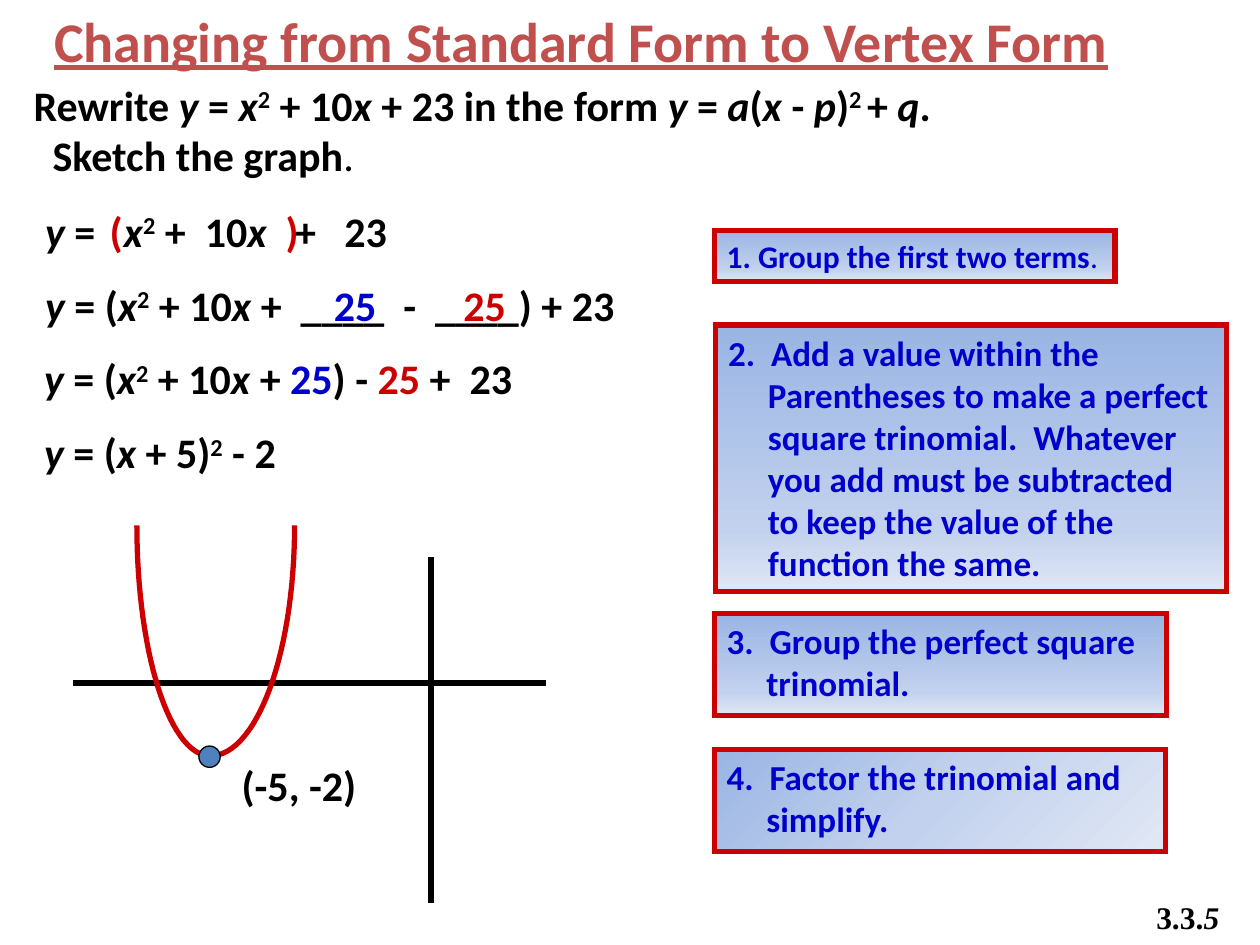
"""Build a slide on changing a quadratic from standard form to vertex form."""
from copy import deepcopy
from math import cos, pi, sin

from lxml.etree import SubElement
from pptx import Presentation
from pptx.dml.color import RGBColor
from pptx.enum.shapes import MSO_CONNECTOR, MSO_SHAPE
from pptx.enum.text import MSO_ANCHOR, MSO_AUTO_SIZE, PP_ALIGN
from pptx.oxml.ns import qn
from pptx.util import Cm, Pt

COLORS = {k: RGBColor.from_string(v) for k, v in {
    "black": "000000", "white": "FFFFFF", "red": "CC0000", "blue": "0000CC",
    "title": "C0504D", "point": "4F81BD",
    "top": "9AB5E4", "middle": "C2D1ED", "bottom": "E1E8F5"}.items()}


def add_text(text, x, y, w, h, size=24, color="black", font="Calibri",
             underline=None, hang=0, box=False):
    """Write lines of runs split by |, with flags after /: i, s, n, b, r."""
    if box:
        sp = s.shapes.add_shape(MSO_SHAPE.RECTANGLE, Cm(x), Cm(y), Cm(w), Cm(h))
        sp.shadow.inherit = False
    else:
        sp = s.shapes.add_textbox(Cm(x), Cm(y), Cm(w), Cm(h))
    tf = sp.text_frame
    tf.word_wrap = False
    tf.auto_size = MSO_AUTO_SIZE.SHAPE_TO_FIT_TEXT
    tf.vertical_anchor = MSO_ANCHOR.TOP
    for i, line in enumerate(text.split("\n")):
        p = tf.add_paragraph() if i else tf.paragraphs[0]
        p.alignment = PP_ALIGN.LEFT
        if i and hang:
            p._p.get_or_add_pPr().set("marL", str(Cm(hang)))
        for piece in line.split("|"):
            words, _, flags = piece.partition("/")
            r = p.add_run()
            r.text = words
            f = r.font
            f.name, f.size, f.underline = font, Pt(size), underline
            f.bold, f.italic = "n" not in flags, "i" in flags
            f.color.rgb = COLORS["blue" if "b" in flags else "red" if "r" in flags else color]
            if "s" in flags:
                f._element.set("baseline", "30000")
    return sp


prs = Presentation()
prs.slide_width, prs.slide_height = Cm(25.4), Cm(19.05)
s = prs.slides.add_slide(prs.slide_layouts[6])

add_text("Changing from Standard Form to Vertex Form", 0.84, 0, 21.95, 1.63,
         size=32, color="title", underline=True)
add_text("Rewrite |y/i| = |x/i|2/s| + 10|x/i| + 23 in the form |y/i| = |a/i|(|x/i| - |p/i|)|2 /s|+ |q/i|.\n"
         "Sketch the graph|./n", 0.43, 1.47, 18.85, 2.31, hang=0.38)

equations = [
    ("y/i| =   |x/i|2/s| +  10|x/i|   +   23", 0.66, 7.9),
    ("y/i| = (|x/i|2/s| + 10|x/i| +  ____  -  ____) + 23", 0.66, 12.62),
    ("y/i| = (|x/i|2/s| + 10|x/i| + |25/b|) - |25/r| +  23", 0.64, 10.49),
    ("y/i| = (|x/i| + 5)|2/s| - 2", 0.64, 5.51)]
rows = [4.01 + 1.49 * i for i in range(len(equations))]
for (text, x, w), y in zip(equations, rows):
    add_text(text, x, y, w, 1.27)

for text, x, y, w, color in [("(", 1.96, rows[0], 0.79, "red"),
                             (")", 5.51, rows[0], 0.79, "red"),
                             ("25", 6.48, rows[1], 1.5, "blue"),
                             ("25", 9.09, rows[1], 1.5, "red")]:
    add_text(text, x, y, w, 1.27, color=color)

steps = [
    ("1. Group the first two terms|./n", 14.4, 4.65, 8.08, 1.02, 18, 90, 0.77),
    ("2.  Add a value within the\nParentheses to make a perfect\n"
     "square trinomial.  Whatever\nyou add must be subtracted\n"
     "to keep the value of the\nfunction the same.", 14.43, 6.55, 10.29, 5.38, 20, 90, 0.77),
    ("3.  Group the perfect square\ntrinomial.", 14.4, 12.37, 9.12, 2.06, 20, 90, 0.77),
    ("4.  Factor the trinomial and\nsimplify.", 14.4, 15.11, 9.09, 2.06, 20, 45, 0.5)]
for text, x, y, w, h, size, angle, middle in steps:
    sp = add_text(text, x, y, w, h, size=size, color="blue", hang=0.8, box=True)
    sp.line.color.rgb, sp.line.width = COLORS["red"], Pt(3)
    SubElement(sp._element.spPr.find(qn("a:ln")), qn("a:miter"), lim="800000")
    sp.fill.gradient()
    sp.fill.gradient_angle = 360 - angle
    stops = sp._element.spPr.find(qn("a:gradFill")).find(qn("a:gsLst"))
    stops.append(deepcopy(stops[0]))
    for stop, pos, name in zip(sp.fill.gradient_stops, (0, middle, 1), ("top", "middle", "bottom")):
        stop.position, stop.color.rgb = pos, COLORS[name]

for x1, y1, x2, y2 in [(8.69, 11.23, 8.69, 18.21), (1.47, 13.77, 11, 13.77)]:
    axis = s.shapes.add_connector(MSO_CONNECTOR.STRAIGHT, Cm(x1), Cm(y1), Cm(x2), Cm(y2))
    axis.line.color.rgb, axis.line.width = COLORS["black"], Pt(3)
    SubElement(axis._element.spPr, qn("a:effectLst"))

vertex_x, top_y, depth, n = 4.24, 10.59, 4.65, 30
for radius in (1.7, -1.48):
    pts = [(Cm(vertex_x + radius * sin(t)), Cm(top_y + depth * cos(t)))
           for t in (pi / 2 * i / n for i in range(n + 1))]
    fb = s.shapes.build_freeform(*pts[0])
    fb.add_line_segments(pts[1:], close=False)
    curve = fb.convert_to_shape()
    curve.shadow.inherit = False
    curve.fill.background()
    curve.line.color.rgb, curve.line.width = COLORS["red"], Pt(3)

dot = s.shapes.add_shape(MSO_SHAPE.OVAL, Cm(4.01), Cm(15.04), Cm(0.43), Cm(0.43))
dot.shadow.inherit = False
dot.fill.solid()
dot.fill.fore_color.rgb = COLORS["point"]
dot.line.color.rgb, dot.line.width = COLORS["black"], Pt(0.75)
add_text("(-5, -2)", 4.62, 15.19, 2.92, 1.27)

number = add_text("3.3.|5/i", 23.06, 17.98, 1.8, 1.02, size=18, font="Times New Roman", box=True)
number.line.fill.background()
number.fill.solid()
number.fill.fore_color.rgb = COLORS["white"]
SubElement(number._element.spPr.find(qn("a:solidFill"))[0], qn("a:alpha"), val="50000")

prs.save("out.pptx")
